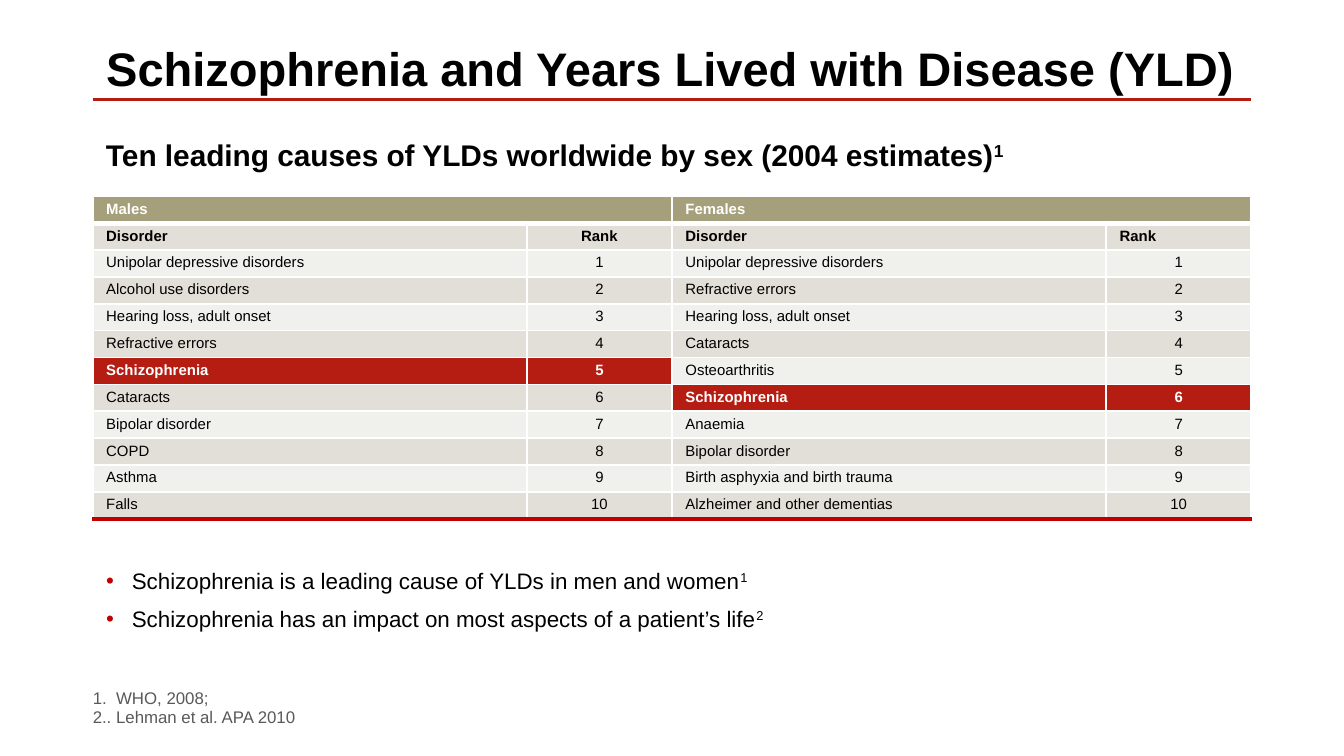
from dataclasses import dataclass

from lxml import etree
from pptx import Presentation
from pptx import util as u
from pptx.dml.color import RGBColor
from pptx.enum import shapes, text
from pptx.oxml import ns


@dataclass(frozen=True)
class Theme:
    face: str = "Arial"
    ink: str = "000000"
    white: str = "FFFFFF"
    grey: str = "595959"
    red: str = "B51C12"
    mark: str = "C00000"
    head: str = "A5A07B"
    dark: str = "E1DFD7"
    light: str = "F0F0EC"
    title: float = 25.2
    lead: float = 16
    list: float = 12
    note: float = 9
    cell: float = 8


T = Theme()
LEFT, WIDE = 0.69, 8.62
ROW = 0.2
COLS = (3.23, 1.08, 3.23, 1.08)
MALES = ("Unipolar depressive disorders", "Alcohol use disorders",
         "Hearing loss, adult onset", "Refractive errors", "Schizophrenia",
         "Cataracts", "Bipolar disorder", "COPD", "Asthma", "Falls")
FEMALES = ("Unipolar depressive disorders", "Refractive errors",
           "Hearing loss, adult onset", "Cataracts", "Osteoarthritis",
           "Schizophrenia", "Anaemia", "Bipolar disorder",
           "Birth asphyxia and birth trauma", "Alzheimer and other dementias")


def apply(obj, fmt):
    for key, val in fmt.items():
        setattr(obj, key, val)


def style(font, size, color, bold=False):
    apply(font, {"name": T.face, "size": u.Pt(size), "bold": bold})
    font.color.rgb = RGBColor.from_string(color)


def place(shape, left, top, width, height):
    apply(shape, {"left": u.Inches(left), "top": u.Inches(top),
                  "width": u.Inches(width), "height": u.Inches(height)})


def child(parent, tag, **attrs):
    return etree.SubElement(parent, ns.qn(tag), attrs)


def write(par, words, note, size, color, bold=False):
    """Fill a paragraph with words and an optional raised note number."""
    for part, raised in ((words, False), (note, True)):
        if part:
            run = par.add_run()
            run.text = part
            style(run.font, size, color, bold)
            if raised:
                run._r.get_or_add_rPr().set("baseline", "30000")


def fill_box(shape, lines, fmt, frame_fmt, bullet=None, **look):
    """Write (words, note) lines with one paragraph format."""
    frame = shape.text_frame
    apply(frame, {"word_wrap": True, **frame_fmt})
    for i, (words, note) in enumerate(lines):
        par = frame.paragraphs[0] if i == 0 else frame.add_paragraph()
        props = par._p.get_or_add_pPr()
        hang = u.Inches(0.19) if bullet else 0
        props.set("marL", str(hang))
        props.set("indent", str(-hang))
        if bullet:
            child(child(props, "a:buClr"), "a:srgbClr", val=T.mark)
            child(props, "a:buChar", char=bullet)
        else:
            child(props, "a:buNone")
        apply(par, fmt)
        if i == 0:
            par.space_before = u.Pt(0)
        write(par, words, note, **look)


def add_rule(slide, top):
    line = slide.shapes.add_connector(
        shapes.MSO_CONNECTOR.STRAIGHT, u.Inches(LEFT), u.Inches(top),
        u.Inches(LEFT + WIDE), u.Inches(top))
    line.line.color.rgb = RGBColor.from_string(T.red)
    line.line.width = u.Pt(1.5)
    child(line._element.spPr, "a:effectLst")


def border(cell, side, color, width):
    line = child(cell._tc.get_or_add_tcPr(), "a:ln" + side, w=str(u.Pt(width)))
    child(child(line, "a:solidFill"), "a:srgbClr", val=color)


def set_cell(cell, words, fill, color, bold, center, edges):
    apply(cell, {"margin_left": u.Inches(0.1), "margin_right": u.Inches(0.1),
                 "margin_top": u.Pt(2.3), "margin_bottom": u.Pt(2.3)})
    for side, edge in edges.items():
        border(cell, side, *edge)
    cell.fill.solid()
    cell.fill.fore_color.rgb = RGBColor.from_string(fill)
    par = cell.text_frame.paragraphs[0]
    par.alignment = text.PP_ALIGN.CENTER if center else text.PP_ALIGN.LEFT
    if words:
        write(par, words, None, T.cell, color, bold)


def find_edges(r, c, end):
    """Inner edges are white; the sides of the table stay open."""
    thin, thick = (T.white, 1), (T.white, 3)
    edges = {}
    if c > 0:
        edges["L"] = thin
    if c < len(COLS) - 1:
        edges["R"] = thin
    edges["T"] = thick if r == 1 else thin
    edges["B"] = thick if r == 0 else (T.mark, 2.25) if r == end else thin
    return edges


def add_ranks(slide):
    rows = [("Males", "", "Females", ""), ("Disorder", "Rank") * 2]
    rows += [(m, str(i), f, str(i))
             for i, (m, f) in enumerate(zip(MALES, FEMALES), 1)]
    table = slide.shapes.add_table(
        len(rows), len(COLS), u.Inches(LEFT), u.Inches(1.46),
        u.Inches(WIDE), u.Inches(ROW * len(rows))).table
    for col, width in zip(table.columns, COLS):
        col.width = u.Inches(width)
    for r, row in enumerate(rows):
        table.rows[r].height = u.Inches(ROW)
        for c, words in enumerate(row):
            # The sought disorder and its rank stand out in red
            hot = row[c - c % 2] == "Schizophrenia"
            fill = (T.head if r == 0 else T.red if hot
                    else T.dark if r % 2 else T.light)
            color = T.white if r == 0 or hot else T.ink
            center = r > 0 and c % 2 == 1 and (r, c) != (1, 3)
            set_cell(table.cell(r, c), words, fill, color, r < 2 or hot,
                     center, find_edges(r, c, len(rows) - 1))
    for c in (0, 2):
        table.cell(0, c).merge(table.cell(0, c + 1))


def main():
    deck = Presentation()
    wide = u.Inches(10)
    apply(deck, {"slide_width": wide, "slide_height": wide * 9 // 16})
    slide = deck.slides.add_slide(deck.slide_layouts[3])
    title, points, notes = slide.placeholders
    fixed = {"auto_size": text.MSO_AUTO_SIZE.NONE,
             "vertical_anchor": text.MSO_ANCHOR.TOP}
    grow = {"auto_size": text.MSO_AUTO_SIZE.SHAPE_TO_FIT_TEXT}
    left = {"alignment": text.PP_ALIGN.LEFT}

    # Title and rule
    place(title, LEFT, 0.29, WIDE, 0.42)
    fill_box(title, [("Schizophrenia and Years Lived with Disease (YLD)", None)],
             {**left, "line_spacing": 0.9}, fixed,
             size=T.title, color=T.ink, bold=True)
    add_rule(slide, 0.74)

    # Table heading
    lead = slide.shapes.add_textbox(0, 0, 0, 0)
    place(lead, LEFT, 0.97, WIDE, 0.37)
    fill_box(lead, [("Ten leading causes of YLDs worldwide by sex "
                     "(2004 estimates)", "1")],
             left, grow, size=T.lead, color=T.ink, bold=True)

    # Ranked causes
    add_ranks(slide)

    # Key points
    place(points, LEFT, 4.19, 5.5, 1)
    fill_box(points,
             [("Schizophrenia is a leading cause of YLDs in men and women", "1"),
              ("Schizophrenia has an impact on most aspects of a patient’s life",
               "2")],
             {**left, "line_spacing": 0.9, "space_before": u.Pt(7.5)},
             fixed, bullet="•", size=T.list, color=T.ink)

    # References
    place(notes, LEFT, 5.26, 4.6, 0.15)
    flush = {f"margin_{side}": 0 for side in ("left", "right", "top", "bottom")}
    fill_box(notes,
             [("1.  WHO, 2008;", None), ("2.. Lehman et al. APA 2010", None)],
             {**left, "line_spacing": u.Pt(10.5), "space_before": u.Pt(0)},
             {**grow, **flush, "vertical_anchor": text.MSO_ANCHOR.BOTTOM},
             size=T.note, color=T.grey)

    deck.save("out.pptx")


if __name__ == "__main__":
    main()
